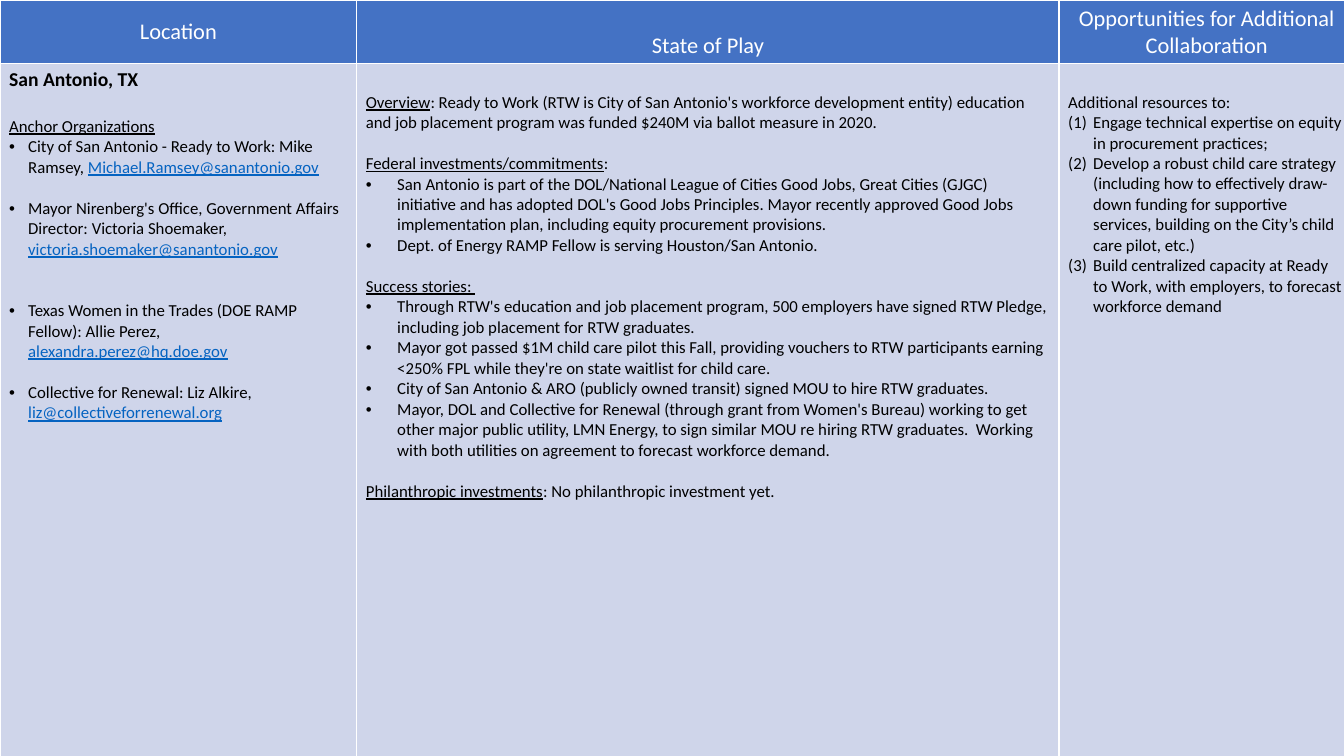
from lxml.etree import SubElement
from pptx import Presentation
from pptx.dml.color import RGBColor
from pptx.enum.text import MSO_ANCHOR, PP_ALIGN
from pptx.oxml.ns import qn
from pptx.util import Cm, Pt

WHITE = RGBColor(0xFF, 0xFF, 0xFF)
BLACK = RGBColor(0, 0, 0)
BLUE = RGBColor(0x44, 0x72, 0xC4)
PALE = RGBColor(0xCF, 0xD5, 0xEA)
LINK = RGBColor(0x05, 0x63, 0xC1)

LINE = 14.65
WIDTHS = (8.99, 17.7, 7.44)
HEIGHTS = (1.58, 17.47)
HEADS = (
    ("Location", MSO_ANCHOR.MIDDLE, 0.12),
    ("State of Play", MSO_ANCHOR.TOP, 0.8),
    ("Opportunities for Additional Collaboration", MSO_ANCHOR.MIDDLE, 0.12),
)

PLACE = (
    ("", 1.17, "_Anchor Organizations_"),
    ("•", 0, "City of San Antonio - Ready to Work: Mike Ramsey, _Michael.Ramsey@sanantonio.gov_"),
    ("•", 1, "Mayor Nirenberg's Office, Government Affairs Director: Victoria Shoemaker, "
             "_victoria.shoemaker@sanantonio.gov_"),
    ("•", 2, "Texas Women in the Trades (DOE RAMP Fellow): Allie Perez, _alexandra.perez@hq.doe.gov_"),
    ("•", 1, "Collective for Renewal: Liz Alkire, _liz@collectiveforrenewal.org_"),
)
STATE = (
    ("", 0, "_Overview_: Ready to Work (RTW is City of San Antonio's workforce development entity) "
            "education and job placement program was funded $240M via ballot measure in 2020."),
    ("", 1, "_Federal investments/commitments_:"),
    ("•", 0, "San Antonio is part of the DOL/National League of Cities Good Jobs, Great Cities (GJGC) "
             "initiative and has adopted DOL's Good Jobs Principles. Mayor recently approved Good Jobs "
             "implementation plan, including equity procurement provisions."),
    ("•", 0, "Dept. of Energy RAMP Fellow is serving Houston/San Antonio."),
    ("", 1, "_Success stories: _"),
    ("•", 0, "Through RTW's education and job placement program, 500 employers have signed RTW Pledge, "
             "including job placement for RTW graduates."),
    ("•", 0, "Mayor got passed $1M child care pilot this Fall, providing vouchers to RTW participants "
             "earning <250% FPL while they're on state waitlist for child care."),
    ("•", 0, "City of San Antonio & ARO (publicly owned transit) signed MOU to hire RTW graduates."),
    ("•", 0, "Mayor, DOL and Collective for Renewal (through grant from Women's Bureau) working to get "
             "other major public utility, LMN Energy, to sign similar MOU re hiring RTW graduates.  "
             "Working with both utilities on agreement to forecast workforce demand."),
    ("", 1, "_Philanthropic investments_: No philanthropic investment yet."),
)
NEEDS = (
    ("", 0, "Additional resources to:"),
    ("(1)", 0, "Engage technical expertise on equity in procurement practices;"),
    ("(1)", 0, "Develop a robust child care strategy (including how to effectively draw-down funding for "
               "supportive services, building on the City’s child care pilot, etc.)"),
    ("(1)", 0, "Build centralized capacity at Ready to Work, with employers, to forecast workforce demand"),
)


class Deck:
    """Holds the style and the current slide, and draws its elements."""

    font = "Calibri"

    def __init__(self):
        self.prs = Presentation()
        self.prs.slide_width, self.prs.slide_height = Cm(33.87), Cm(19.05)
        self.slide = self.prs.slides.add_slide(self.prs.slide_layouts[6])

    def table(self, widths, heights):
        frame = self.slide.shapes.add_table(
            len(heights), len(widths), 0, 0, Cm(sum(widths)), Cm(sum(heights)))
        table = frame.table
        table.first_row = table.horz_banding = False
        for col, width in zip(table.columns, widths):
            col.width = Cm(width)
        for row, height in zip(table.rows, heights):
            row.height = Cm(height)
        return table

    def cell(self, cell, fill, top):
        cell.margin_left = cell.margin_right = Cm(0.23)
        cell.margin_top, cell.margin_bottom = Cm(top), Cm(0.1)
        props = cell._tc.get_or_add_tcPr()
        for side in ("lnL", "lnR", "lnT", "lnB"):
            line = SubElement(props, qn("a:" + side), w=str(Pt(1)))
            paint = SubElement(line, qn("a:solidFill"))
            SubElement(paint, qn("a:srgbClr"), val=str(WHITE))
        cell.fill.solid()
        cell.fill.fore_color.rgb = fill

    def style(self, font, size, color, bold=False):
        font.name, font.size, font.bold = self.font, Pt(size), bold
        font.color.rgb = color

    def head(self, cell, text, anchor, top):
        self.cell(cell, BLUE, top)
        cell.vertical_anchor = anchor
        para = cell.text_frame.paragraphs[0]
        para.text, para.alignment = text, PP_ALIGN.CENTER
        self.style(para.font, 16, WHITE)

    def bullet(self, para, mark, indent):
        props = para._p.get_or_add_pPr()
        props.set("marL", str(Cm(indent)))
        props.set("indent", str(-Cm(indent)))
        if mark == "•":
            SubElement(props, qn("a:buFont"), typeface="Arial")
            SubElement(props, qn("a:buChar"), char=mark)
        else:
            SubElement(props, qn("a:buAutoNum"), type="arabicParenBoth")

    def body(self, cell, items, indent, top, title=""):
        self.cell(cell, PALE, top)
        para = cell.text_frame.paragraphs[0]
        if title:
            para.text = title
            self.style(para.font, 14, BLACK, True)
            para = cell.text_frame.add_paragraph()
        for index, (mark, gap, text) in enumerate(items):
            if index:
                para = cell.text_frame.add_paragraph()
            para.space_before = Pt(gap * LINE)
            if mark:
                self.bullet(para, mark, indent)
            self.style(para.font, 12, BLACK)
            for turn, part in enumerate(text.split("_")):
                if part:
                    run = para.add_run()
                    run.text = part
                    if turn % 2:
                        run.font.underline = True
                        if "@" in part:
                            run.font.color.rgb = LINK


def main():
    deck = Deck()
    table = deck.table(WIDTHS, HEIGHTS)
    for col, head in enumerate(HEADS):
        deck.head(table.cell(0, col), *head)
    deck.body(table.cell(1, 0), PLACE, 0.48, 0.12, "San Antonio, TX")
    deck.body(table.cell(1, 1), STATE, 0.79, 0.72)
    deck.body(table.cell(1, 2), NEEDS, 0.63, 0.72)
    deck.prs.save("out.pptx")


if __name__ == "__main__":
    main()
